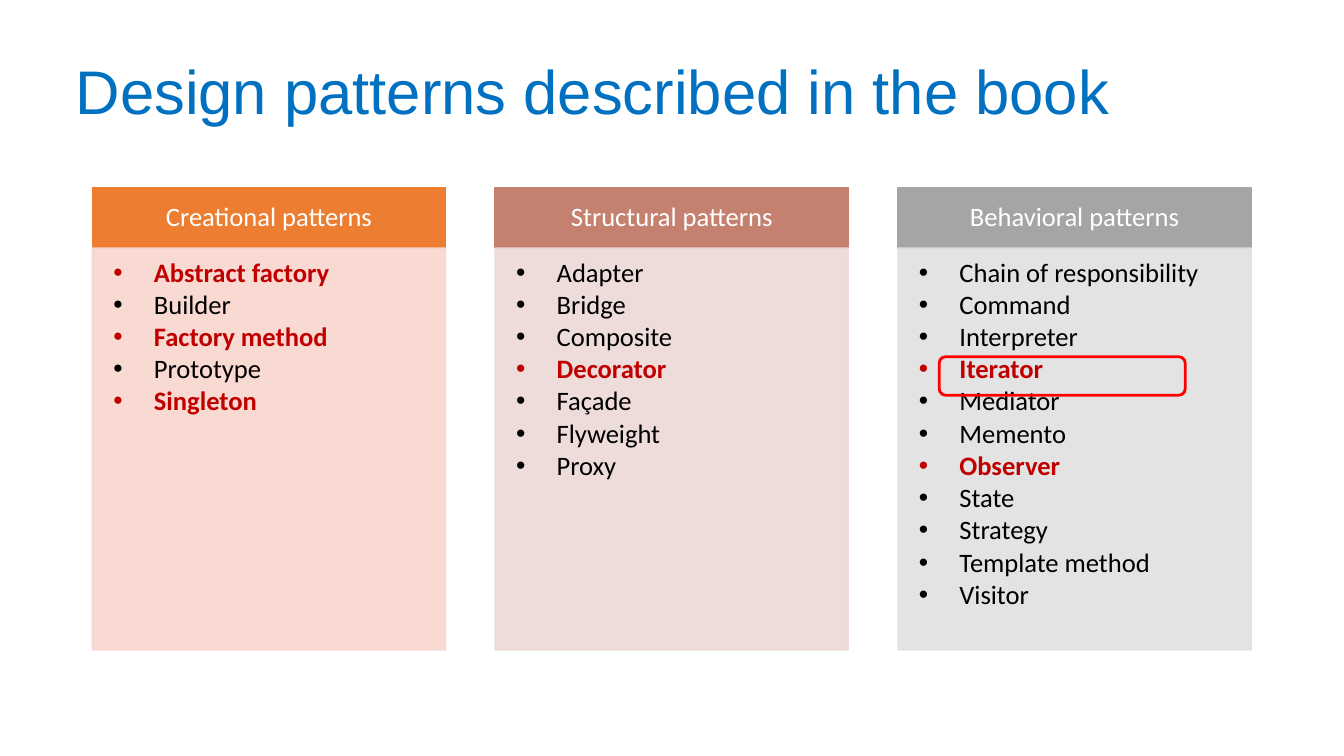
from lxml import etree
from pptx import Presentation
from pptx.dml.color import RGBColor
from pptx.enum.shapes import MSO_SHAPE
from pptx.enum.text import MSO_ANCHOR, MSO_AUTO_SIZE, PP_ALIGN
from pptx.oxml.ns import qn
from pptx.util import Cm, Pt

RECTANGLE, ROUNDED = MSO_SHAPE.RECTANGLE, MSO_SHAPE.ROUNDED_RECTANGLE
TOP, MIDDLE = MSO_ANCHOR.TOP, MSO_ANCHOR.MIDDLE
LEFT, CENTER = PP_ALIGN.LEFT, PP_ALIGN.CENTER
NO_AUTOFIT = MSO_AUTO_SIZE.NONE

COLORS = {
    "title": "0070C0", "heading": "FFFFFF", "text": "000000",
    "covered": "C00000", "marker": "FF0000",
    "creational": "ED7D31", "creational_light": "F8D7CE",
    "structural": "C48170", "structural_light": "EDD9D7",
    "behavioral": "A5A5A5", "behavioral_light": "E1E1E1",
}
COLUMNS = [
    ("creational", "Creational patterns",
     ["Abstract factory", "Builder", "Factory method", "Prototype", "Singleton"]),
    ("structural", "Structural patterns",
     ["Adapter", "Bridge", "Composite", "Decorator", "Façade", "Flyweight", "Proxy"]),
    ("behavioral", "Behavioral patterns",
     ["Chain of responsibility", "Command", "Interpreter", "Iterator", "Mediator",
      "Memento", "Observer", "State", "Strategy", "Template method", "Visitor"]),
]
COVERED = {"Abstract factory", "Factory method", "Singleton",
           "Decorator", "Iterator", "Observer"}

COLUMN_LEFT, COLUMN_PITCH, COLUMN_WIDTH = 2.33, 10.15, 8.9
HEADING_TOP, HEADING_HEIGHT, LIST_HEIGHT = 4.72, 1.53, 10.13


def add_panel(left, top, height, color, margins, anchor):
    panel = page.shapes.add_shape(RECTANGLE, Cm(left), Cm(top),
                                  Cm(COLUMN_WIDTH), Cm(height))
    panel.shadow.inherit = False
    panel.fill.solid()
    panel.fill.fore_color.rgb = RGBColor.from_string(COLORS[color])
    panel.line.color.rgb = RGBColor.from_string(COLORS[color])
    panel.line.width = Pt(1)
    frame = panel.text_frame
    frame.word_wrap = True
    frame.vertical_anchor = anchor
    (frame.margin_left, frame.margin_top,
     frame.margin_right, frame.margin_bottom) = [Cm(margin) for margin in margins]
    return panel


def format_text(para, font, size, color, bold=False):
    para.line_spacing = 0.9
    for span in para.runs:
        span.font.name = font
        span.font.size = Pt(size)
        span.font.bold = bold
        span.font.color.rgb = RGBColor.from_string(COLORS[color])


deck = Presentation()
deck.slide_width, deck.slide_height = Cm(33.87), Cm(19.05)
page = deck.slides.add_slide(deck.slide_layouts[5])

# Title
title = page.shapes.title
title.left, title.top, title.width, title.height = Cm(1.65), Cm(1.02), Cm(29.9), Cm(2.72)
title.text_frame.text = "Design patterns described in the book"
title.text_frame.auto_size = NO_AUTOFIT
title.text_frame.vertical_anchor = MIDDLE
title.text_frame.paragraphs[0].alignment = LEFT
format_text(title.text_frame.paragraphs[0], "Arial", 44, "title")

# Columns: a heading above a bulleted list
for number, (family, heading, patterns) in enumerate(COLUMNS):
    left = COLUMN_LEFT + number * COLUMN_PITCH
    header = add_panel(left, HEADING_TOP, HEADING_HEIGHT, family,
                       (0.38, 0.2, 0.38, 0.2), MIDDLE)
    para = header.text_frame.paragraphs[0]
    para.text = heading
    para.alignment = CENTER
    format_text(para, "Calibri", 19, "heading")

    body = add_panel(left, HEADING_TOP + HEADING_HEIGHT, LIST_HEIGHT,
                     family + "_light", (0.28, 0.28, 0.38, 0.43), TOP)
    # Panel fill and outline are slightly transparent
    for color in body._element.spPr.iter(qn("a:srgbClr")):
        etree.SubElement(color, qn("a:alpha"), val="90000")

    body.text_frame.text = "\n".join(patterns)
    for para in body.text_frame.paragraphs:
        covered = para.text in COVERED
        para.level = 1
        para.alignment = LEFT
        para.space_after = Pt(2.5)
        format_text(para, "Calibri", 19, "covered" if covered else "text", covered)
        properties = para._p.get_or_add_pPr()
        properties.set("marL", str(Cm(1.27)))
        properties.set("indent", str(Cm(-1.02)))
        etree.SubElement(properties, qn("a:buFont"), typeface="Arial")
        etree.SubElement(properties, qn("a:buChar"), char="•")

# Marker around the Iterator pattern
marker = page.shapes.add_shape(ROUNDED, Cm(23.67), Cm(8.99), Cm(6.2), Cm(0.97))
marker.shadow.inherit = False
marker.fill.background()
marker.line.color.rgb = RGBColor.from_string(COLORS["marker"])
marker.line.width = Pt(2)

deck.save("out.pptx")
